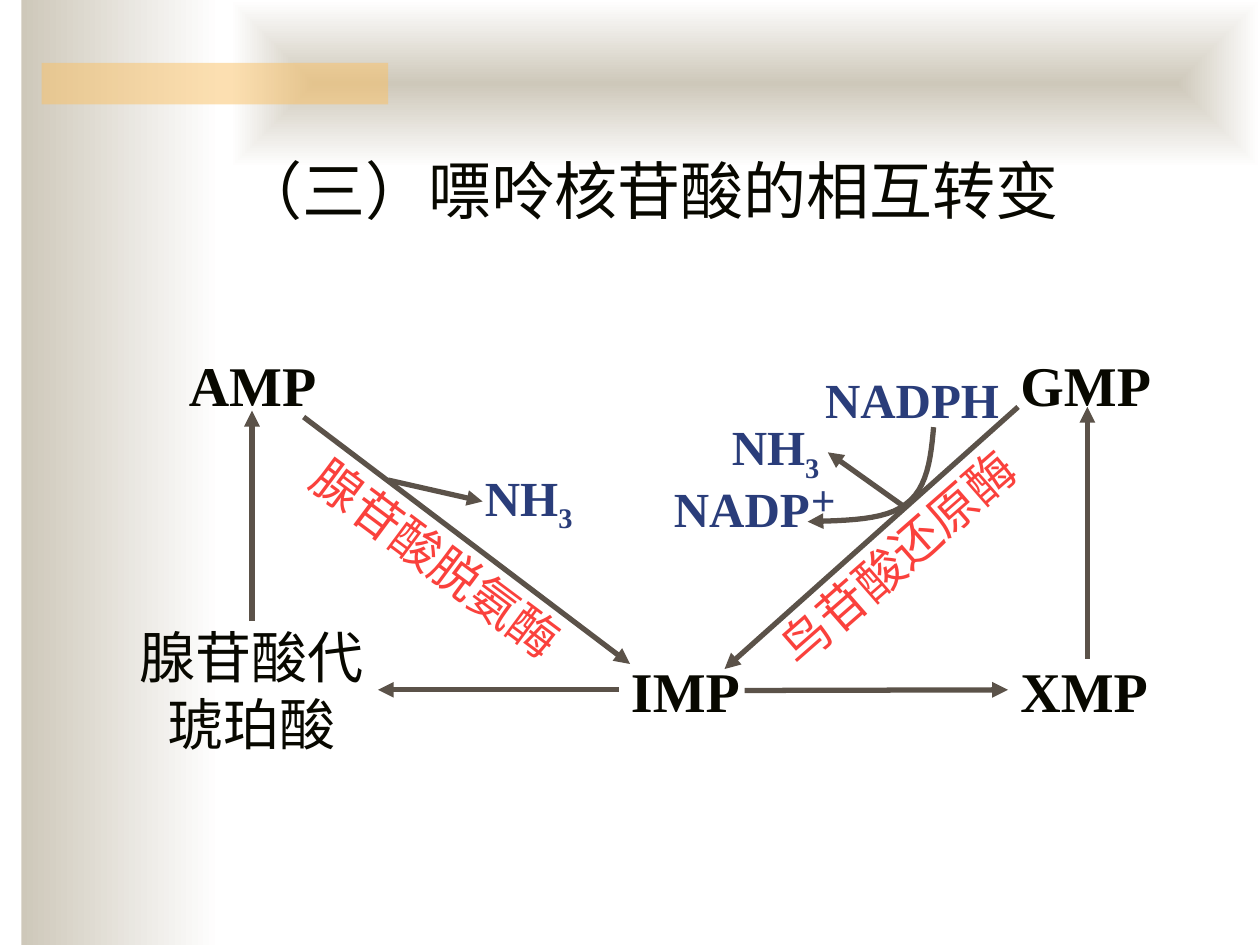
from pptx import Presentation
from pptx.dml.color import RGBColor
from pptx.enum.shapes import MSO_CONNECTOR, MSO_SHAPE
from pptx.enum.text import MSO_ANCHOR, PP_ALIGN
from pptx.oxml.ns import qn
from pptx.util import Inches, Pt
from lxml.etree import SubElement

COLORS = {"sand": "CEC8BA", "white": "FFFFFF", "amber": "FAC164", "ink": "080800",
          "arrow": "5B5249", "cofactor": "2A3D7A", "enzyme": "FA413C"}
LATIN, CJK = "Times New Roman", "Noto Sans CJK SC"

TITLE = "（三）嘌呤核苷酸的相互转变"

# name: (left, top, width, height)
NUCLEOTIDES = {
    "IMP": (4.91, 5.16, 1.33, 0.63),
    "XMP": (8, 5.16, 1.33, 0.63),
    "GMP": (8, 2.73, 1.33, 0.63),
    "AMP": (1.4, 2.73, 1.33, 0.63),
}
SUCCINATE, SUCCINATE_BOX = "腺苷酸代琥珀酸", (1, 4.89, 2, 1.17)

# (text, raised or lowered text, baseline shift in percent, box)
COFACTORS = [
    ("NH", "3", -25, (3.75, 3.66, 1, 0.57)),
    ("NADP", "＋", 30, (5.25, 3.75, 1.67, 0.57)),
    ("NADPH", "", 0, (6.45, 2.88, 1.67, 0.57)),
    ("NH", "3", -25, (5.71, 3.26, 1, 0.57)),
]
# (name, rotation, box)
ENZYMES = [
    ("腺苷酸脱氨酶", 36.7, (2.2, 4.16, 2.58, 0.57)),
    ("鸟苷酸还原酶", 318.7, (5.85, 4.12, 2.58, 0.57)),
]
# (start, end)
REACTIONS = [
    ((8.63, 5.23), (8.63, 3.23)),  # XMP to GMP
    ((2, 4.93), (2, 3.26)),        # adenylosuccinate to AMP
    ((2.41, 3.31), (5, 5.27)),     # AMP to IMP
    ((3.08, 3.81), (3.83, 3.98)),  # release of NH3 from AMP
    ((8.08, 3.23), (5.75, 5.31)),  # GMP to IMP
    ((7.16, 4.01), (6.57, 3.59)),  # release of NH3 from GMP
]
# NADPH to NADP+: two cubic Bezier pieces
COFACTOR_CURVE = [
    ((7.41, 3.39), (7.39, 3.63), (7.36, 3.88), (7.19, 4)),
    ((7.19, 4), (7.03, 4.13), (6.72, 4.13), (6.41, 4.14)),
]
CURVE_STEPS = 12

prs = Presentation()
prs.slide_width, prs.slide_height = Inches(10), Inches(7.5)
slide = prs.slides.add_slide(prs.slide_layouts[6])


def rgb(name):
    return RGBColor.from_string(COLORS[name])


def add_band(box):
    band = slide.shapes.add_shape(MSO_SHAPE.RECTANGLE, *map(Inches, box))
    band.shadow.inherit = False
    band.line.fill.background()
    return band


def fade(band, from_center=False):
    """Fill from sand to white, left to right or from the centre outwards."""
    band.fill.gradient()
    band.fill.gradient_angle = 0
    for stop, color, position in zip(band.fill.gradient_stops, ("sand", "white"), (0, 1)):
        stop.color.rgb = rgb(color)
        stop.position = position
    if from_center:
        gradient = band._element.spPr.find(qn("a:gradFill"))
        gradient.remove(gradient.find(qn("a:lin")))
        center = SubElement(gradient, qn("a:path"), path="shape")
        SubElement(center, qn("a:fillToRect"), l="50000", t="50000", r="50000", b="50000")


def add_text(text, box, size=32, color="ink", bold=False, font=LATIN, align=PP_ALIGN.LEFT,
             anchor=MSO_ANCHOR.TOP, rotation=0, shifted="", shift=0):
    label = slide.shapes.add_textbox(*map(Inches, box))
    label.rotation = rotation
    frame = label.text_frame
    frame.word_wrap = True
    frame.vertical_anchor = anchor
    paragraph = frame.paragraphs[0]
    paragraph.alignment = align
    for content, baseline in ((text, 0), (shifted, shift)):
        if not content:
            continue
        run = paragraph.add_run()
        run.text = content
        run.font.size, run.font.bold, run.font.name = Pt(size), bold, font
        run.font.color.rgb = rgb(color)
        properties = run._r.get_or_add_rPr()
        SubElement(properties, qn("a:ea"), typeface=CJK)
        if baseline:
            properties.set("baseline", str(baseline * 1000))
    return label


def style_arrow(arrow):
    arrow.line.color.rgb = rgb("arrow")
    arrow.line.width = Pt(3)
    SubElement(arrow.line._get_or_add_ln(), qn("a:tailEnd"), type="triangle")


def add_arrow(start, end):
    arrow = slide.shapes.add_connector(MSO_CONNECTOR.STRAIGHT, *map(Inches, (*start, *end)))
    style_arrow(arrow)
    SubElement(arrow._element.spPr, qn("a:effectLst"))
    return arrow


def bezier(points, t):
    weights = ((1 - t) ** 3, 3 * t * (1 - t) ** 2, 3 * t ** 2 * (1 - t), t ** 3)
    return tuple(Inches(sum(w * p[axis] for w, p in zip(weights, points))) for axis in (0, 1))


fade(add_band((0.17, 0, 1.58, 7.5)))
fade(add_band((1.83, 0, 8.17, 1.33)), from_center=True)
accent = add_band((0.33, 0.5, 2.75, 0.33))
accent.fill.solid()
accent.fill.fore_color.rgb = rgb("amber")
accent_color = accent._element.spPr.find(qn("a:solidFill")).find(qn("a:srgbClr"))
SubElement(accent_color, qn("a:alpha"), val="50000")

add_text(TITLE, (0.9, 0.99, 8.5, 0.86), size=36, font=CJK,
         align=PP_ALIGN.CENTER, anchor=MSO_ANCHOR.BOTTOM)

nucleotides = {name: add_text(name, box, bold=True) for name, box in NUCLEOTIDES.items()}
succinate = add_text(SUCCINATE, SUCCINATE_BOX, align=PP_ALIGN.CENTER)

for start, end in REACTIONS:
    add_arrow(start, end)
to_succinate = add_arrow((4.91, 5.48), (3, 5.48))
to_succinate.begin_connect(nucleotides["IMP"], 1)
to_succinate.end_connect(succinate, 3)
to_xmp = add_arrow((5.91, 5.48), (8, 5.48))
to_xmp.end_connect(nucleotides["XMP"], 1)

curve_points = [bezier(piece, step / CURVE_STEPS)
                for piece in COFACTOR_CURVE for step in range(1, CURVE_STEPS + 1)]
builder = slide.shapes.build_freeform(*bezier(COFACTOR_CURVE[0], 0))
builder.add_line_segments(curve_points, close=False)
curve = builder.convert_to_shape()
curve.shadow.inherit = False
curve.fill.background()
style_arrow(curve)

for text, shifted, shift, box in COFACTORS:
    add_text(text, box, size=28, color="cofactor", bold=True, shifted=shifted, shift=shift)
for name, rotation, box in ENZYMES:
    add_text(name, box, size=28, color="enzyme", rotation=rotation)

prs.save("out.pptx")
